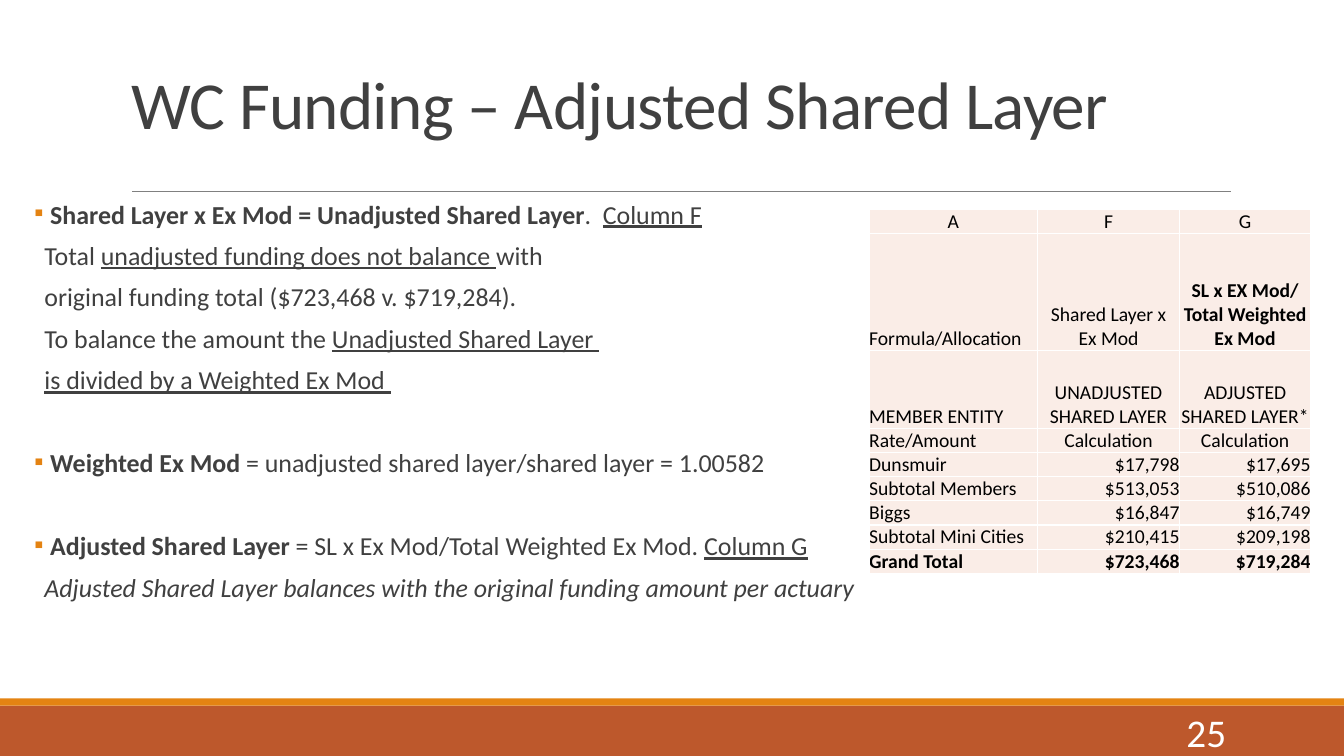
import pptx
import pptx.util
import pptx.dml.color
import pptx.enum.shapes
import pptx.enum.text
import pptx.oxml
import pptx.oxml.ns
from lxml import etree

Inches, Pt = pptx.util.Inches, pptx.util.Pt
Align, Anchor = pptx.enum.text.PP_ALIGN, pptx.enum.text.MSO_ANCHOR
FONT = "Calibri"
ORANGE, RUST, GREY, DARK = "E48312", "BD582C", "808080", "404040"
WHITE, BLACK, PINK = "FFFFFF", "000000", "FAEDE7"

TITLE = "WC Funding – Adjusted Shared Layer"
# Each line: bullet shown, space before in points, runs of (text, style)
LINES = [
    (True, 0, [(" Shared Layer x Ex Mod = Unadjusted Shared Layer", "b"),
               (".  ", ""), ("Column F", "u")]),
    (False, 12, [("Total ", ""), ("unadjusted funding does not balance ", "u"),
                 ("with", "")]),
    (False, 12, [("original funding total ($723,468 v. $719,284).", "")]),
    (False, 12, [("To balance the amount the ", ""),
                 ("Unadjusted Shared Layer ", "u")]),
    (False, 12, [("is divided by a Weighted Ex Mod ", "u")]),
    (True, 41.8, [(" Weighted Ex Mod ", "b"),
                  ("= unadjusted shared layer/shared layer = 1.00582", "")]),
    (True, 41.8, [(" Adjusted Shared Layer ", "b"),
                  ("= SL x Ex Mod/Total Weighted Ex Mod. ", ""),
                  ("Column G", "u")]),
    (False, 12, [("Adjusted Shared Layer balances with the original "
                  "funding amount per actuary", "i")]),
]
ROWS = [
    ("A", "F", "G"),
    ("Formula/Allocation", "Shared Layer x\vEx Mod",
     "SL x EX Mod/\vTotal Weighted\vEx Mod"),
    ("MEMBER ENTITY", "UNADJUSTED SHARED LAYER", "ADJUSTED SHARED LAYER*"),
    ("Rate/Amount", "Calculation", "Calculation"),
    ("Dunsmuir", "$17,798", "$17,695"),
    ("Subtotal Members", "$513,053", "$510,086"),
    ("Biggs", "$16,847", "$16,749"),
    ("Subtotal Mini Cities", "$210,415", "$209,198"),
    ("Grand Total", "$723,468", "$719,284"),
]
WIDTHS = (1.67, 1.41, 1.3)
TALL = {1: 1.16, 2: 0.77}
BOLD = {(1, 2), (8, 0), (8, 1), (8, 2)}
PAGE = "25"


def rgb(code):
    return pptx.dml.color.RGBColor.from_string(code)


def style(par, size, color, bold=None):
    font = par.font
    font.name, font.size, font.bold = FONT, Pt(size), bold
    font.color.rgb = rgb(color)


def place(shape, *box):
    shape.left, shape.top, shape.width, shape.height = map(Inches, box)


def bar(slide, top, height, color):
    shape = slide.shapes.add_shape(
        pptx.enum.shapes.MSO_SHAPE.RECTANGLE,
        0, Inches(top), Inches(13.33), Inches(height))
    shape.shadow.inherit = False
    shape.fill.solid()
    shape.fill.fore_color.rgb = rgb(color)
    shape.line.fill.background()


def rule(slide):
    line = slide.shapes.add_connector(
        pptx.enum.shapes.MSO_CONNECTOR.STRAIGHT,
        Inches(1.31), Inches(1.9), Inches(12.21), Inches(1.9))
    line.line.color.rgb = rgb(GREY)
    line.line.width = Pt(0.5)
    etree.SubElement(line._element.spPr, pptx.oxml.ns.qn("a:effectLst"))


def mark(par, shown):
    """Set the indent and the square bullet of a paragraph."""
    props = par._p.get_or_add_pPr()
    props.set("marL", str(Inches(0.1)))
    props.set("indent", str(Inches(-0.1) if shown else 0))
    qn = pptx.oxml.ns.qn
    if shown:
        color = etree.SubElement(props, qn("a:buClr"))
        etree.SubElement(color, qn("a:srgbClr"), val=ORANGE)
        etree.SubElement(props, qn("a:buFont"), typeface=FONT)
        etree.SubElement(props, qn("a:buChar"), char="▪")
    else:
        etree.SubElement(props, qn("a:buNone"))


def head(shape):
    place(shape, 1.2, 0.31, 11, 1.16)
    frame = shape.text_frame
    frame.text = TITLE
    frame.auto_size = pptx.enum.text.MSO_AUTO_SIZE.NONE
    frame.vertical_anchor = Anchor.BOTTOM
    par = frame.paragraphs[0]
    par.alignment, par.line_spacing = Align.LEFT, 0.85
    style(par, 48, DARK)
    par.runs[0]._r.get_or_add_rPr().set("spc", "-50")


def body(shape):
    place(shape, 0.34, 2, 11.12, 4.2)
    frame = shape.text_frame
    frame.auto_size = pptx.enum.text.MSO_AUTO_SIZE.NONE
    frame.margin_left = frame.margin_right = 0
    for i, (shown, gap, runs) in enumerate(LINES):
        par = frame.add_paragraph() if i else frame.paragraphs[0]
        par.line_spacing = 0.7
        par.space_before, par.space_after = Pt(gap), Pt(2)
        mark(par, shown)
        style(par, 18.5, DARK)
        for text, look in runs:
            run = par.add_run()
            run.text = text
            if look == "b":
                run.font.bold = True
            elif look == "u":
                run.font.underline = True
            elif look == "i":
                run.font.italic = True


def border(cell):
    props = cell._tc.get_or_add_tcPr()
    for side in ("lnL", "lnR", "lnT", "lnB"):
        line = etree.SubElement(props, pptx.oxml.ns.qn("a:" + side),
                                w=str(Pt(1)))
        fill = etree.SubElement(line, pptx.oxml.ns.qn("a:solidFill"))
        etree.SubElement(fill, pptx.oxml.ns.qn("a:srgbClr"), val=WHITE)


def align(r, c):
    if c == 0 and r > 0:
        return Align.LEFT
    return Align.CENTER if r < 4 else Align.RIGHT


def grid(slide):
    table = slide.shapes.add_table(
        len(ROWS), len(WIDTHS), Inches(8.62), Inches(2.08),
        Inches(4.37), Inches(3.62)).table
    table.first_row = table.horz_banding = False
    for col, width in zip(table.columns, WIDTHS):
        col.width = Inches(width)
    for r, row in enumerate(ROWS):
        table.rows[r].height = Inches(TALL.get(r, 0.24))
        for c, text in enumerate(row):
            cell = table.cell(r, c)
            cell.margin_left = cell.margin_right = 0
            cell.margin_top = cell.margin_bottom = 0
            cell.vertical_anchor = Anchor.BOTTOM
            border(cell)
            cell.fill.solid()
            cell.fill.fore_color.rgb = rgb(PINK)
            cell.text = text
            par = cell.text_frame.paragraphs[0]
            par.alignment = align(r, c)
            style(par, 14, BLACK, (r, c) in BOLD)


def number(slide):
    box = slide.shapes.add_textbox(
        Inches(10.83), Inches(7.06), Inches(1.43), Inches(0.4))
    frame = box.text_frame
    frame.word_wrap = True
    frame.vertical_anchor = Anchor.MIDDLE
    frame.text = PAGE
    par = frame.paragraphs[0]
    par.alignment = Align.RIGHT
    style(par, 28, WHITE)


def main():
    deck = pptx.Presentation()
    deck.slide_width, deck.slide_height = Inches(13.33), Inches(7.5)
    slide = deck.slides.add_slide(deck.slide_layouts[1])
    bar(slide, 7, 0.5, RUST)
    bar(slide, 6.93, 0.07, ORANGE)
    rule(slide)
    head(slide.shapes.title)
    body(slide.placeholders[1])
    grid(slide)
    number(slide)
    deck.save("out.pptx")


if __name__ == "__main__":
    main()
